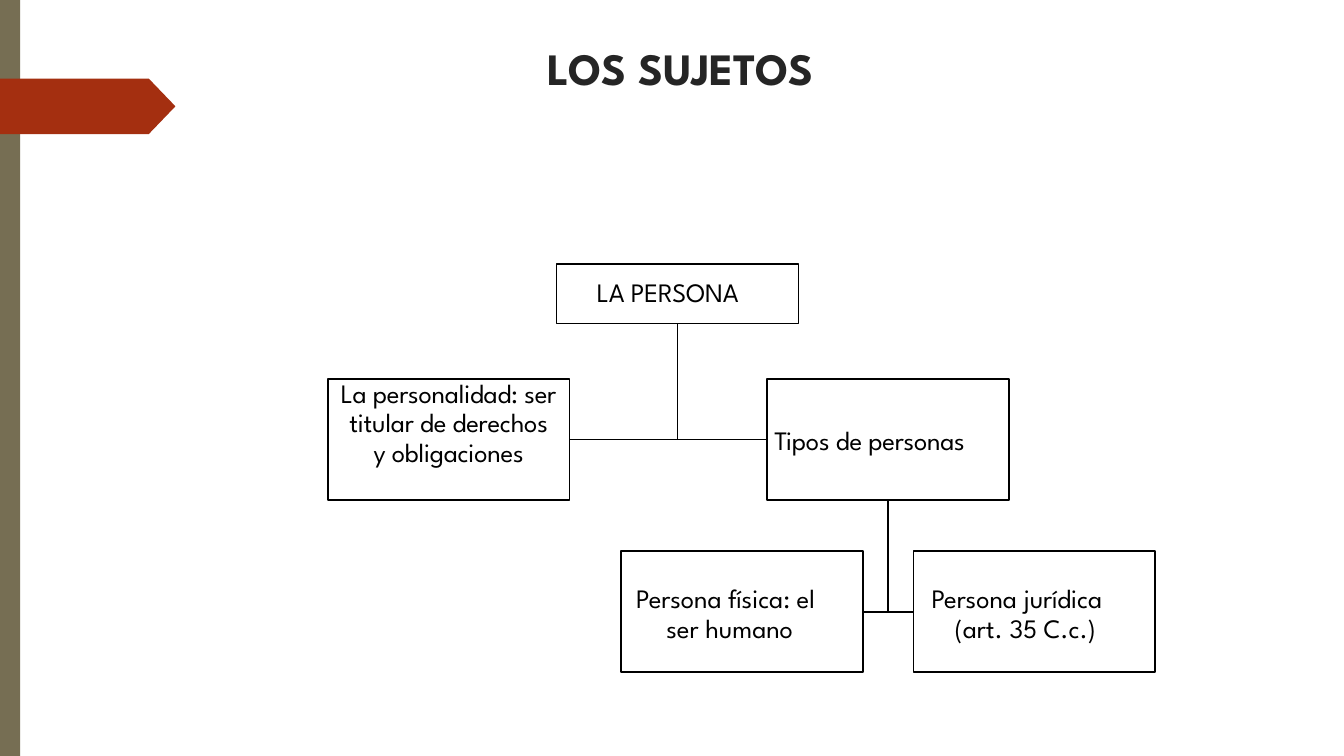
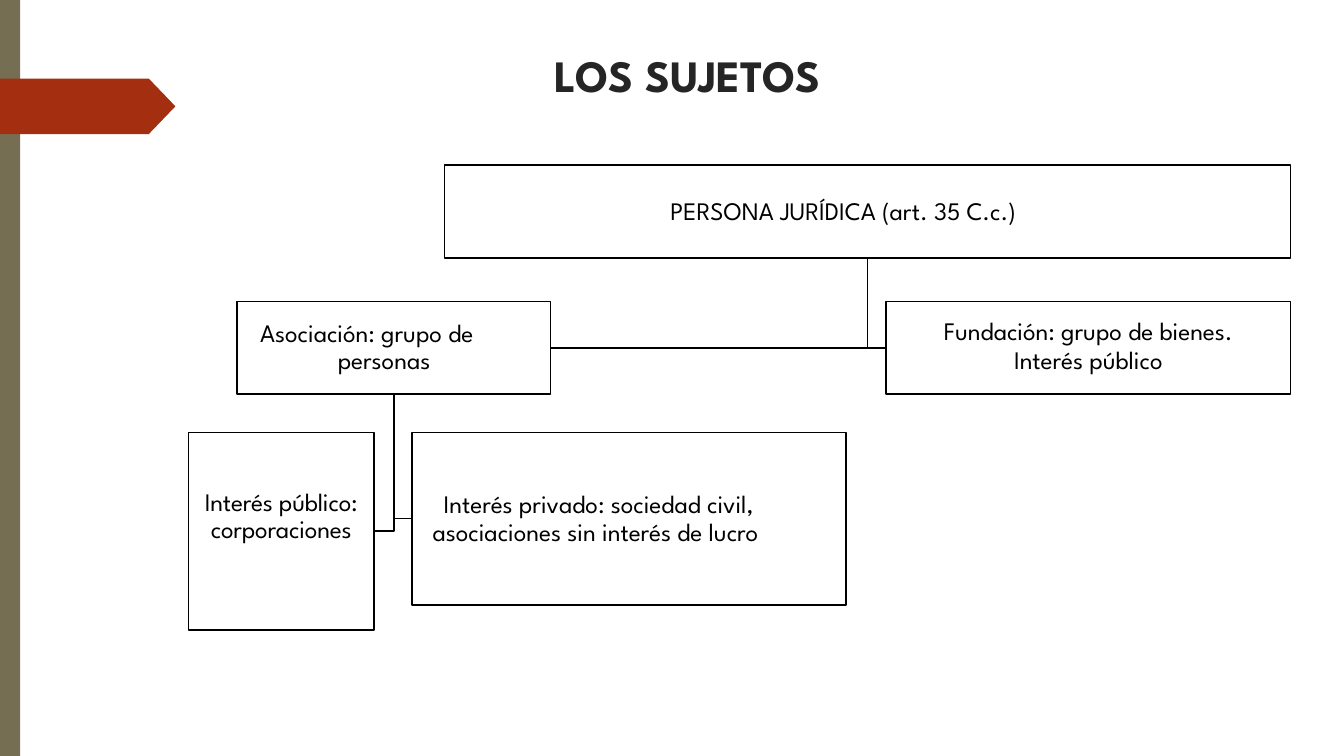
from pptx import Presentation
from pptx.dml.color import RGBColor
from pptx.enum.shapes import MSO_SHAPE
from pptx.enum.text import MSO_ANCHOR, PP_ALIGN
from pptx.util import Inches, Pt

RECTANGLE, PENTAGON = MSO_SHAPE.RECTANGLE, MSO_SHAPE.PENTAGON
LEFT, CENTER = PP_ALIGN.LEFT, PP_ALIGN.CENTER
TOP = MSO_ANCHOR.TOP

WIDTH, HEIGHT = 13.33, 7.5
FONT = "League Spartan"
BLACK, WHITE = "000000", "FFFFFF"
OLIVE, RED, TITLE_COLOR = "766E53", "A42F10", "252525"
LINE_WIDTH = Pt(1.25)
TIGHT = -10  # letter spacing in hundredths of a point


def color(value):
    return RGBColor.from_string(value)


def set_attributes(target, values):
    for name, value in values.items():
        setattr(target, name, value)


def write(shape, text, size, inset=(0, 0), align=LEFT, spacing=None,
          margin=0, indent=0, ink=BLACK, bold=False, tracking=0):
    """Fill a shape with text; inset is its left and top distance."""
    frame = shape.text_frame
    frame.text = text
    set_attributes(frame, {
        "word_wrap": True, "vertical_anchor": TOP,
        "margin_left": Inches(inset[0]), "margin_top": Inches(inset[1]),
        "margin_right": 0, "margin_bottom": 0})
    for para in frame.paragraphs:
        properties = para._p.get_or_add_pPr()
        properties.set("marL", str(Inches(margin)))
        properties.set("indent", str(Inches(indent)))
        set_attributes(para, {"alignment": align, "line_spacing": spacing})
        for span in para.runs:
            set_attributes(span.font, {"name": FONT, "size": Pt(size), "bold": bold})
            span.font.color.rgb = color(ink)
            span._r.get_or_add_rPr().set("spc", str(tracking))


def add_block(slide, kind, area, fill):
    block = slide.shapes.add_shape(kind, *map(Inches, area))
    block.shadow.inherit = False
    block.fill.solid()
    block.fill.fore_color.rgb = color(fill)
    block.line.fill.background()
    return block


def draw_outline(shape):
    shape.line.color.rgb = color(BLACK)
    shape.line.width = LINE_WIDTH


def add_box(slide, area, text, size, **layout):
    box = add_block(slide, RECTANGLE, area, WHITE)
    draw_outline(box)
    write(box, text, size, **layout)
    return box


def link(slide, parent, *children):
    """Draw an elbow from the parent's foot to the side of each child."""
    stem, foot = parent.left + parent.width // 2, parent.top + parent.height
    builder = slide.shapes.build_freeform(stem, foot)
    for child in children:
        level = child.top + child.height // 2
        edge = child.left if child.left > stem else child.left + child.width
        if child is not children[0]:
            builder.move_to(stem, foot)
        builder.add_line_segments([(stem, level), (edge, level)], close=False)
    elbows = builder.convert_to_shape()
    elbows.shadow.inherit = False
    elbows.fill.background()
    draw_outline(elbows)


def add_slide(deck, title_left, title_top):
    slide = deck.slides.add_slide(deck.slide_layouts[6])
    # Side band and arrow
    add_block(slide, RECTANGLE, (0, 0, 0.2, HEIGHT), OLIVE)
    arrow = add_block(slide, PENTAGON, (0, 0.78, 1.74, 0.55), RED)
    arrow.adjustments[0] = 0.48
    # Title
    title = slide.shapes.add_textbox(
        *map(Inches, (title_left, title_top, 4, 0.6)))
    write(title, "LOS SUJETOS", 32, ink=TITLE_COLOR, bold=True, tracking=TIGHT)
    return slide


def build_person(deck):
    slide = add_slide(deck, 5.43, 0.4)
    size, width, height = 19, 2.4, 1.2
    middle, bottom = 3.76, 5.47
    exact = Pt(21)

    person = add_box(slide, (5.52, 2.62, width, 0.59), "LA PERSONA", size,
                     inset=(0.4, 0.12), tracking=TIGHT)
    personality = add_box(
        slide, (3.25, middle, width, height),
        "La personalidad: ser\vtitular de derechos\vy obligaciones", size,
        inset=(0, 0.01), align=CENTER, spacing=0.92, tracking=TIGHT)
    kinds = add_box(slide, (7.61, middle, width, height), "Tipos de personas",
                    size, inset=(0.07, 0.45), tracking=TIGHT)
    natural = add_box(
        slide, (6.16, bottom, width, height), "Persona física: el\vser humano",
        size, inset=(0, 0.33), spacing=exact, margin=0.45, indent=-0.3)
    legal = add_box(
        slide, (9.06, bottom, width, height), "Persona jurídica\v(art. 35 C.c.)",
        size, inset=(0, 0.33), spacing=exact, margin=0.41, indent=-0.23)

    link(slide, person, personality, kinds)
    link(slide, kinds, natural, legal)


def build_legal_person(deck):
    slide = add_slide(deck, 5.5, 0.47)
    size, height = 18, 0.92
    middle, bottom = 2.99, 4.29
    exact = Pt(19.8)

    legal = add_box(slide, (4.41, 1.64, 8.39, height),
                    "PERSONA JURÍDICA (art. 35 C.c.)", size, inset=(2.24, 0.3))
    association = add_box(
        slide, (2.35, middle, 3.11, height), "Asociación: grupo de\vpersonas",
        size, inset=(0.23, 0.18), spacing=exact, margin=0.77, indent=-0.77)
    foundation = add_box(
        slide, (8.79, middle, 4.01, height),
        "Fundación: grupo de bienes.\nInterés público", size,
        inset=(0, 0.15), align=CENTER, spacing=Pt(20.7))
    public = add_box(
        slide, (1.87, bottom, 1.84, 1.96), "Interés público:\vcorporaciones",
        size, inset=(0, 0.56), align=CENTER, spacing=0.92, tracking=TIGHT)
    private = add_box(
        slide, (4.09, bottom, 4.3, 1.71),
        "Interés privado: sociedad civil,\vasociaciones sin interés de lucro",
        size, inset=(0.2, 0.58), spacing=exact, indent=0.11)

    link(slide, legal, association)
    link(slide, legal, foundation)
    link(slide, association, public, private)


def main():
    deck = Presentation()
    deck.slide_width, deck.slide_height = Inches(WIDTH), Inches(HEIGHT)
    build_person(deck)
    build_legal_person(deck)
    deck.save("out.pptx")


if __name__ == "__main__":
    main()
